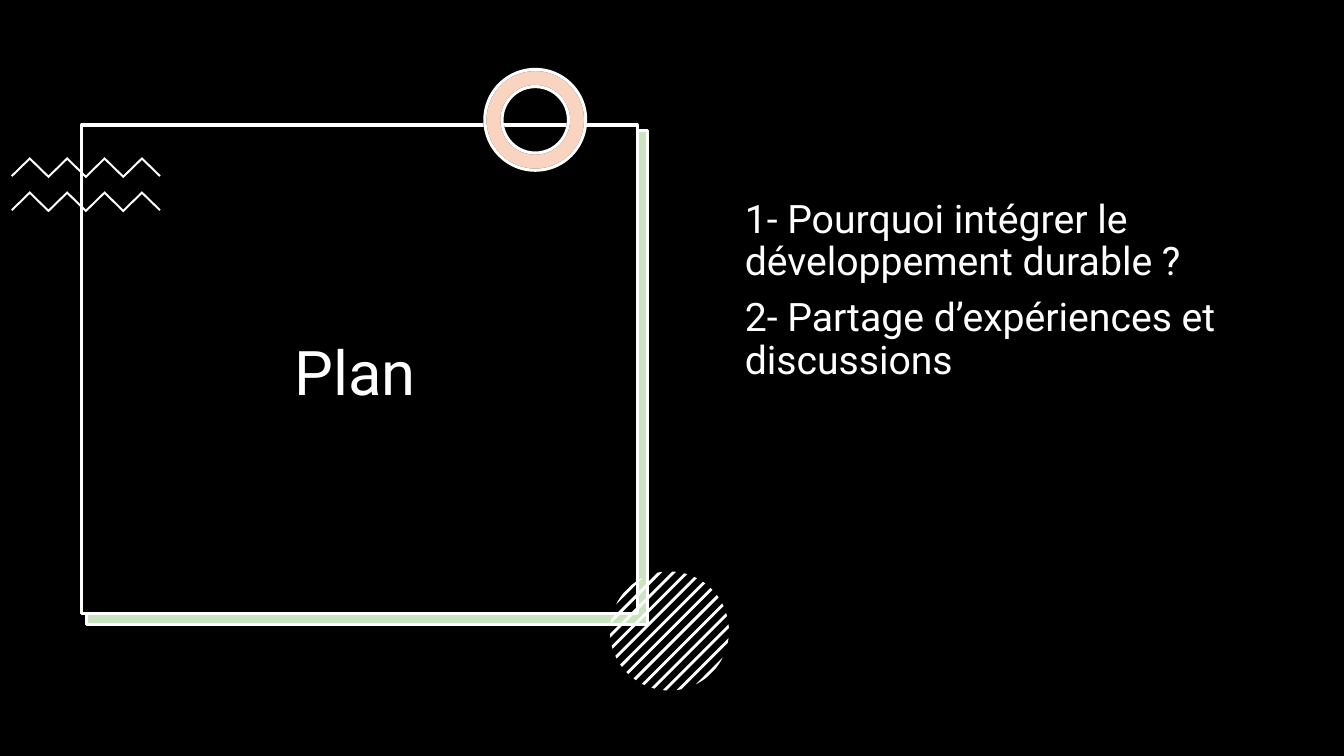
import math
from dataclasses import dataclass
from lxml import etree
from pptx import Presentation
from pptx import util as u
from pptx.dml.color import RGBColor
from pptx.enum import shapes, text
from pptx.oxml import ns


@dataclass(frozen=True)
class Theme:
    dark: str = "000000"
    light: str = "FFFFFF"
    green: str = "4EA72E"
    peach: str = "E97132"
    tint: int = 30
    font: str = "Roboto"
    head: int = 44
    body: int = 28
    line: float = 2.25


THEME = Theme()
KIND = shapes.MSO_SHAPE


def paint(shape, fill, line=None, alpha=None):
    shape.shadow.inherit = False
    shape.fill.solid()
    shape.fill.fore_color.rgb = RGBColor.from_string(fill)
    if alpha:
        tone = shape.fill._xPr.find(".//" + ns.qn("a:srgbClr"))
        etree.SubElement(tone, ns.qn("a:alpha"), val=str(alpha * 1000))
    if line:
        shape.line.color.rgb = RGBColor.from_string(line)
        shape.line.width = u.Pt(THEME.line)
    else:
        shape.line.fill.background()


def put(slide, kind, box, fill, line=None, alpha=None):
    shape = slide.shapes.add_shape(kind, *map(u.Cm, box))
    paint(shape, fill, line, alpha)
    return shape


def trace(group, points):
    spots = [(u.Cm(x), u.Cm(y)) for x, y in points]
    pen = group.shapes.build_freeform(*spots[0], scale=1.0)
    pen.add_line_segments(spots[1:], close=True)
    paint(pen.convert_to_shape(), THEME.light)


def style(para, size, align):
    para.alignment = align
    para.line_spacing = 0.9
    para.font.name = THEME.font
    para.font.size = u.Pt(size)
    para.font.bold = False
    para.font.color.rgb = RGBColor.from_string(THEME.light)


def panel(slide, box):
    x, y, w, h = box
    back = w + 0.15, h + 0.13
    put(slide, KIND.RECTANGLE, (x + 0.1, y + 0.15, *back), THEME.light)
    put(slide, KIND.RECTANGLE, (x + 0.12, y + 0.13, *back), THEME.green, THEME.light, THEME.tint)
    put(slide, KIND.RECTANGLE, box, THEME.dark, THEME.light)


def waves(slide, box):
    x, y, w, h = box
    count, thick = 8, 0.07
    step, rise = w / count, 0.46
    group = slide.shapes.add_group_shape()
    for top in (y, y + h - rise - thick):
        upper = [(x + i * step, top + rise * (i % 2 == 0)) for i in range(count + 1)]
        lower = [(px, py + thick) for px, py in upper[1:-1]]
        end = top + rise + thick / 2
        lower = [(x + thick / 2, end), *lower, (x + w - thick / 2, end)]
        trace(group, upper + lower[::-1])


def ring(slide, box):
    for fill, line, alpha in ((THEME.light, THEME.dark, None), (THEME.peach, THEME.light, THEME.tint)):
        put(slide, KIND.DONUT, box, fill, line, alpha).adjustments[0] = 0.17


def disc(slide, box):
    x, y, w, h = box
    rad, step, half, turn = w / 2, 0.243, 0.036, math.pi / 4
    group = slide.shapes.add_group_shape()
    for k in range(-6, 7):
        near, far = (math.acos((k * step + d) / rad) for d in (-half, half))
        arc = [near + (far - near) * i / 6 for i in range(7)]
        rim = arc + [-a for a in arc[::-1]]
        trace(group, [(x + rad + rad * math.cos(a + turn), y + rad + rad * math.sin(a + turn)) for a in rim])


def title(slide, box, words):
    shape = slide.shapes.title
    shape.left, shape.top, shape.width, shape.height = map(u.Cm, box)
    frame = shape.text_frame
    frame.text = words
    frame.word_wrap = True
    frame.auto_size = text.MSO_AUTO_SIZE.NONE
    frame.vertical_anchor = text.MSO_ANCHOR.MIDDLE
    style(frame.paragraphs[0], THEME.head, text.PP_ALIGN.CENTER)
    slide.shapes._spTree.append(shape._element)


def agenda(slide, box, items):
    frame = slide.shapes.add_textbox(*map(u.Cm, box)).text_frame
    frame.word_wrap = True
    frame.text = "\n".join(items)
    for i, para in enumerate(frame.paragraphs):
        style(para, THEME.body, text.PP_ALIGN.LEFT)
        if i:
            para.space_before = u.Pt(10)


def main():
    deck = Presentation()
    deck.slide_width, deck.slide_height = u.Cm(33.87), u.Cm(19.05)
    slide = deck.slides.add_slide(deck.slide_layouts[5])
    put(slide, KIND.RECTANGLE, (0, 0, 33.87, 19.05), THEME.dark)
    panel(slide, (2.06, 3.15, 14, 12.32))
    waves(slide, (0.28, 3.96, 3.77, 1.39))
    ring(slide, (12.22, 1.75, 2.54, 2.54))
    disc(slide, (15.37, 14.4, 3, 3))
    title(slide, (2.34, 3.86, 13.61, 11.23), "Plan ")
    agenda(slide, (18.52, 4.9, 13.82, 12.09), (
        "1- Pourquoi intégrer le développement durable ?",
        "2- Partage d’expériences et discussions",
    ))
    deck.save("out.pptx")


if __name__ == "__main__":
    main()
